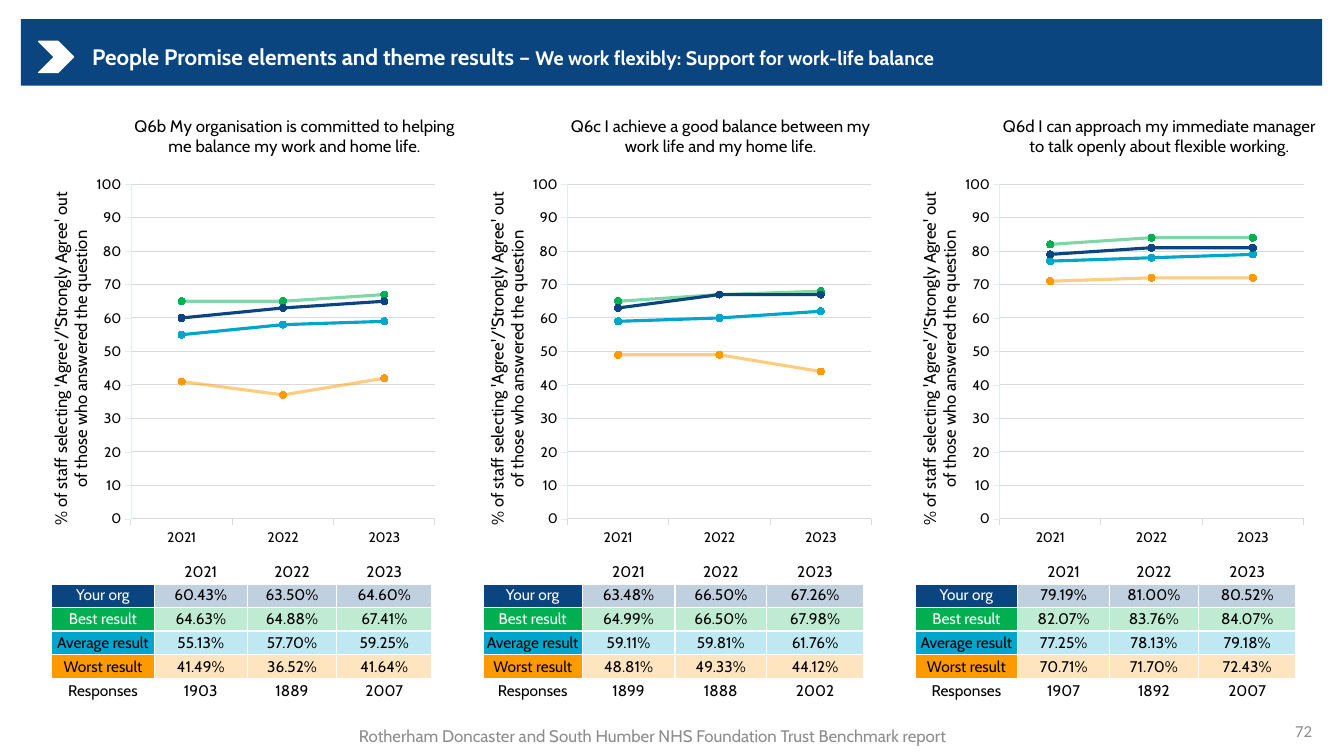
from lxml import etree
from pptx import Presentation
from pptx.chart.data import CategoryChartData
from pptx.dml.color import RGBColor
from pptx.enum.chart import XL_CHART_TYPE, XL_MARKER_STYLE, XL_TICK_MARK
from pptx.enum.shapes import MSO_SHAPE
from pptx.enum.text import MSO_ANCHOR, PP_ALIGN
from pptx.oxml import parse_xml
from pptx.oxml.ns import nsdecls, qn
from pptx.util import Cm, Pt

LEFT, CENTER, RIGHT = PP_ALIGN.LEFT, PP_ALIGN.CENTER, PP_ALIGN.RIGHT
MIDDLE = MSO_ANCHOR.MIDDLE
OUTSIDE = XL_TICK_MARK.OUTSIDE
LINE_MARKERS = XL_CHART_TYPE.LINE_MARKERS
CIRCLE = XL_MARKER_STYLE.CIRCLE
RECTANGLE, CHEVRON = MSO_SHAPE.RECTANGLE, MSO_SHAPE.CHEVRON

NAVY, GREEN, CYAN, ORANGE = "0B457F", "00B050", "00A5CC", "FF9900"
WHITE, BLACK, GREY, GRID = "FFFFFF", "000000", "8C8C8C", "D9D9D9"
YEARS = ["2021", "2022", "2023"]
AXIS_TITLE = ("% of staff selecting 'Agree'/'Strongly Agree' out "
              "of those who answered the question")

# label, table colour, label colour, line colour, line opacity in percent
RESULTS = [
    ("Your org", NAVY, WHITE, NAVY, 100),
    ("Best result", GREEN, WHITE, GREEN, 50),
    ("Average result", CYAN, BLACK, CYAN, 100),
    ("Worst result", ORANGE, BLACK, "FF9A02", 50),
]
DRAW_ORDER = [2, 1, 3, 0]

# scores fill the table, plotted holds the whole percentages of the chart
QUESTIONS = [
    {"title": "Q6b My organisation is committed to helping me balance my work and home life.",
     "scores": [(60.43, 63.50, 64.60), (64.63, 64.88, 67.41),
                (55.13, 57.70, 59.25), (41.49, 36.52, 41.64)],
     "plotted": [(60, 63, 65), (65, 65, 67), (55, 58, 59), (41, 37, 42)],
     "responses": (1903, 1889, 2007),
     "chart_left": 1.17, "columns": (2.59, 2.34, 2.26, 2.39)},
    {"title": "Q6c I achieve a good balance between my work life and my home life.",
     "scores": [(63.48, 66.50, 67.26), (64.99, 66.50, 67.98),
                (59.11, 59.81, 61.76), (48.81, 49.33, 44.12)],
     "plotted": [(63, 67, 67), (65, 67, 68), (59, 60, 62), (49, 49, 44)],
     "responses": (1899, 1888, 2002),
     "chart_left": 12.17, "columns": (2.49, 2.34, 2.31, 2.44)},
    {"title": "Q6d I can approach my immediate manager to talk openly about flexible working.",
     "scores": [(79.19, 81.00, 80.52), (82.07, 83.76, 84.07),
                (77.25, 78.13, 79.18), (70.71, 71.70, 72.43)],
     "plotted": [(79, 81, 81), (82, 84, 84), (77, 78, 79), (71, 72, 72)],
     "responses": (1907, 1892, 2007),
     "chart_left": 23.06, "columns": (2.59, 2.31, 2.24, 2.46)},
]


def paint(fill, color, opacity=100):
    """Make a fill solid in a hex colour, with opacity in percent."""
    fill.solid()
    fill.fore_color.rgb = RGBColor.from_string(color)
    if opacity < 100:
        solid = fill._xPr.find(qn("a:solidFill"))
        etree.SubElement(solid[0], qn("a:alpha"), val=str(opacity * 1000))


def write(frame, text, size=12, color=BLACK, bold=False, align=LEFT, font="Cabin"):
    """Append a run to the first paragraph of a text frame."""
    paragraph = frame.paragraphs[0]
    paragraph.alignment = align
    if not text:
        etree.SubElement(paragraph._p, qn("a:endParaRPr"), sz=str(size * 100))
        return
    run = paragraph.add_run()
    run.text = text
    run.font.size, run.font.bold, run.font.name = Pt(size), bold, font
    paint(run.font.fill, color)


prs = Presentation()
prs.slide_width, prs.slide_height = Cm(33.87), Cm(19.05)
slide = prs.slides.add_slide(prs.slide_layouts[6])
shapes = slide.shapes

# Header band
for preset, box, color in [(RECTANGLE, (0.53, 0.48, 32.79, 1.68), NAVY),
                           (CHEVRON, (0.97, 1.04, 0.89, 0.79), WHITE)]:
    header_part = shapes.add_shape(preset, *map(Cm, box))
    header_part.shadow.inherit = False
    paint(header_part.fill, color)
    header_part.line.fill.background()
paint(header_part.line.fill, WHITE)
header_part.line.width = Pt(0.75)

# Heading, page number and footer
for box, align, runs in [
    ((2.07, 0.87, 24.41, 1.12), LEFT, [
        ("People Promise elements and theme results – ",
         {"size": 16, "color": WHITE, "bold": True}),
        ("We work flexibly: Support for work-life balance",
         {"size": 14, "color": WHITE, "bold": True})]),
    ((25.7, 17.91, 7.62, 1.02), RIGHT, [("72", {"color": GREY, "font": "Calibri"})]),
    ((7.5, 18.05, 17.91, 0.99), CENTER, [
        ("Rotherham Doncaster and South Humber NHS Foundation Trust Benchmark report",
         {"color": GREY})]),
]:
    frame = shapes.add_textbox(*map(Cm, box)).text_frame
    frame.word_wrap = True
    frame.vertical_anchor = MIDDLE
    for text, style in runs:
        write(frame, text, align=align, **style)

for number, question in enumerate(QUESTIONS):
    # Line chart
    data = CategoryChartData(number_format="0")
    data.categories = YEARS
    for index in DRAW_ORDER:
        data.add_series(RESULTS[index][0], question["plotted"][index])
    chart = shapes.add_chart(LINE_MARKERS, Cm(question["chart_left"]), Cm(2.49),
                             Cm(10.44), Cm(11.25), data).chart
    chart.has_legend = False
    chart.font.size, chart.font.name = Pt(10), "Cabin"
    paint(chart.font.fill, BLACK)
    chart.has_title = True
    write(chart.chart_title.text_frame, question["title"], align=CENTER)

    years, percent = chart.category_axis, chart.value_axis
    percent.minimum_scale, percent.maximum_scale, percent.major_unit = 0, 100, 10
    percent.tick_labels.number_format = "0"
    percent.tick_labels.number_format_is_linked = False
    percent.has_title = True
    write(percent.axis_title.text_frame, AXIS_TITLE, align=CENTER)
    rotation = percent.axis_title.text_frame._txBody.find(qn("a:bodyPr"))
    rotation.set("rot", "-5400000")
    rotation.set("vert", "horz")
    percent.has_major_gridlines = True
    for line, color, width in [(years.format.line, GRID, 0.75),
                               (percent.format.line, "DBEFF9", 0.25),
                               (percent.major_gridlines.format.line, GRID, 0.75)]:
        paint(line.fill, color)
        line.width = Pt(width)
    for axis in (years, percent):
        axis.major_tick_mark = OUTSIDE
        axis.tick_labels.font.size, axis.tick_labels.font.name = Pt(10), "Cabin"
        paint(axis.tick_labels.font.fill, BLACK)

    plot = chart.plots[0]
    plot.vary_by_categories = False
    for series, index in zip(plot.series, DRAW_ORDER):
        color, opacity = RESULTS[index][3:]
        series.smooth = False
        paint(series.format.line.fill, color, opacity)
        series.format.line.width = Pt(2.25)
        series.marker.style, series.marker.size = CIRCLE, 5
        paint(series.marker.format.fill, color)
        paint(series.marker.format.line.fill, color)

    plot_area = chart._chartSpace.find(".//" + qn("c:plotArea"))
    for part, position, layout in [
        (chart.chart_title._element, 1, {"x": 0.205, "y": 0.03}),
        (percent.axis_title._element, 1, {"x": 0, "y": 0.21}),
        (plot_area, 0, {"x": 0.204, "y": 0.193, "w": 0.734, "h": 0.756}),
    ]:
        for automatic in part.findall(qn("c:layout")):
            part.remove(automatic)
        target = '<c:layoutTarget val="inner"/>' if part is plot_area else ""
        modes = '<c:xMode val="edge"/><c:yMode val="edge"/>'
        sizes = "".join(f'<c:{key} val="{value}"/>' for key, value in layout.items())
        part.insert(position, parse_xml(
            f'<c:layout {nsdecls("c")}><c:manualLayout>{target}{modes}{sizes}'
            "</c:manualLayout></c:layout>"))

    # Table of results
    rows = [["", *YEARS]]
    for result, scores in zip(RESULTS, question["scores"]):
        rows.append([result[0], *(f"{score:.2f}%" for score in scores)])
    rows.append(["Responses", *map(str, question["responses"])])
    table = shapes.add_table(len(rows), 4, Cm(1.3 + 10.88 * number), Cm(14.1),
                             Cm(sum(question["columns"])), Cm(0.6 * len(rows))).table
    table.first_row = table.horz_banding = False
    for column, width in zip(table.columns, question["columns"]):
        column.width = Cm(width)
    for r, row in enumerate(rows):
        table.rows[r].height = Cm(0.6)
        for c, text in enumerate(row):
            cell = table.cell(r, c)
            cell.vertical_anchor = MIDDLE
            cell.margin_left = cell.margin_right = cell.margin_top = cell.margin_bottom = 0
            for side in ("lnL", "lnR", "lnT", "lnB"):
                width = Pt(3) if r == 0 and side == "lnB" else Pt(1)
                cell._tc.get_or_add_tcPr().append(parse_xml(
                    f'<a:{side} {nsdecls("a")} w="{width}"><a:solidFill>'
                    f'<a:srgbClr val="{WHITE}"/></a:solidFill></a:{side}>'))
            text_color = BLACK
            if 0 < r <= len(RESULTS):
                _, color, label_color, _, _ = RESULTS[r - 1]
                paint(cell.fill, color, 100 if c == 0 else 25)
                text_color = label_color if c == 0 else BLACK
            else:
                cell.fill.background()
            write(cell.text_frame, text, size=11, color=text_color, align=CENTER)

prs.save("out.pptx")
